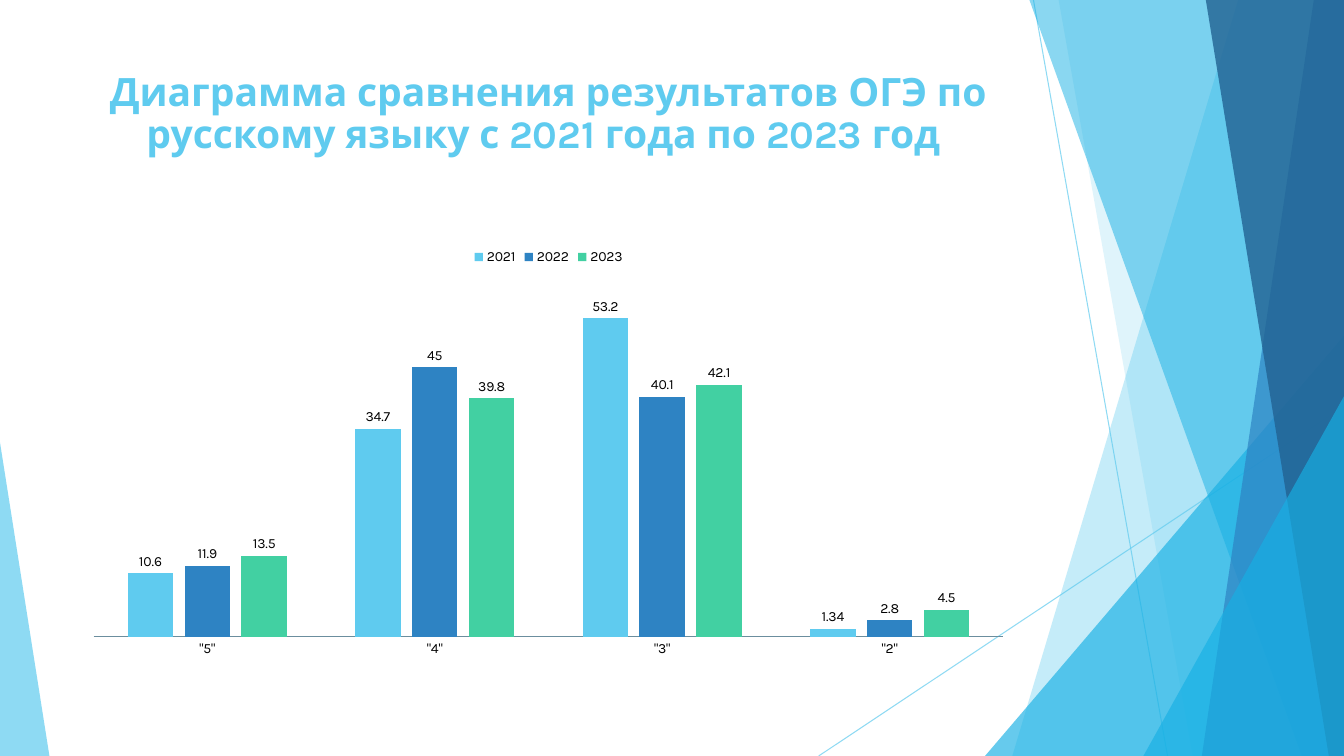
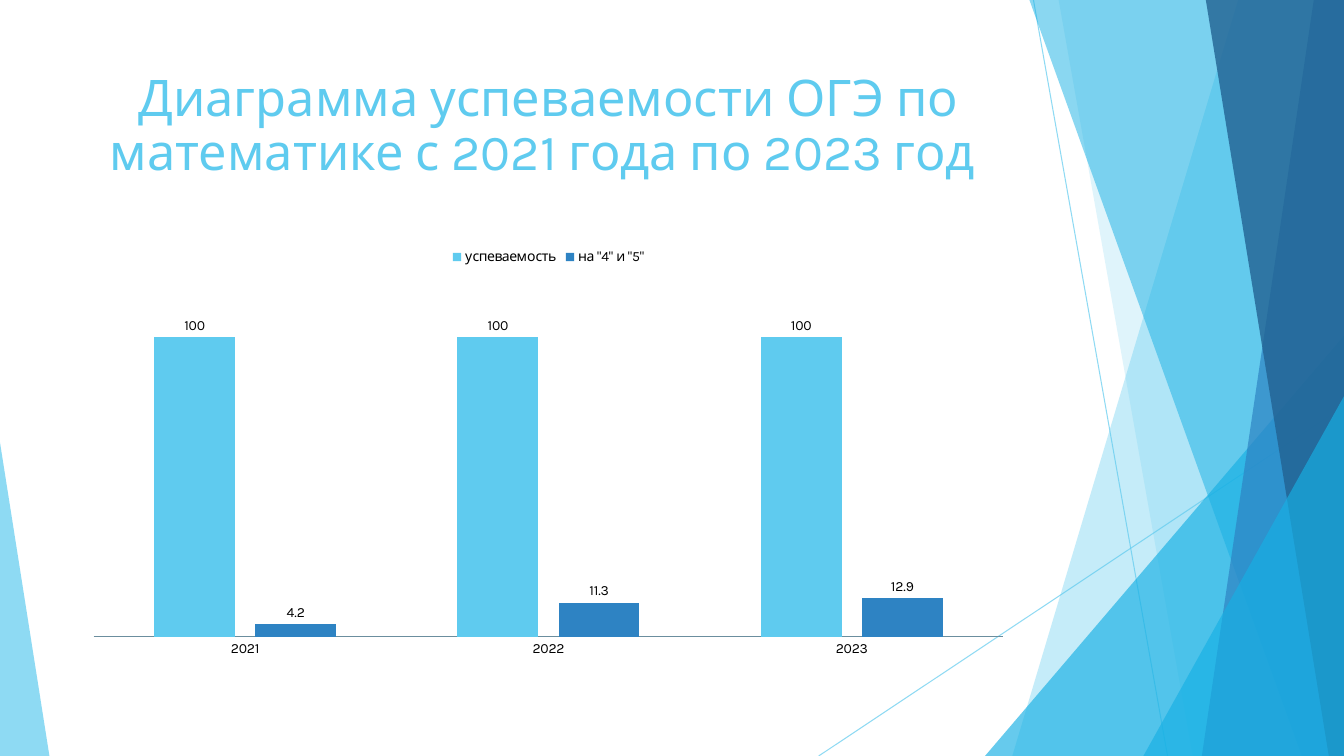
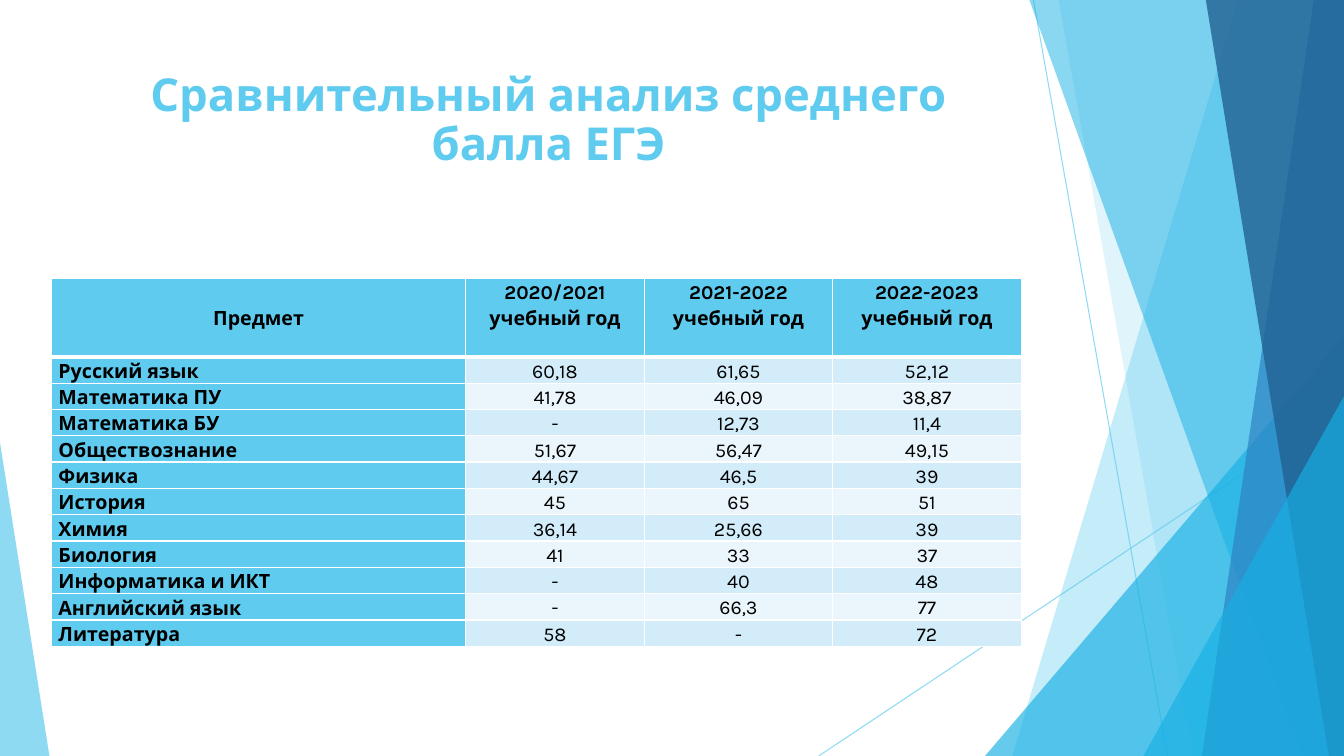
import dataclasses

import pptx
import pptx.chart.data
import pptx.dml.color
import pptx.enum.chart
import pptx.enum.shapes
import pptx.enum.text
import pptx.oxml
import pptx.oxml.ns
import pptx.util

Inches = pptx.util.Inches
Pt = pptx.util.Pt
WIDTH, HEIGHT = 13.33, 7.5


@dataclasses.dataclass(frozen=True)
class Theme:
    font: str = "Karla"
    sky: str = "5FCBEF"
    cyan: str = "17B0E4"
    blue: str = "2E83C3"
    navy: str = "226292"
    green: str = "42D0A2"
    axis: str = "6B8E9E"
    text: str = "000000"
    white: str = "FFFFFF"
    bands: tuple = ("D2ECF9", "EAF6FC")
    chart_size: float = 10
    table_size: float = 14


def rgb(value):
    return pptx.dml.color.RGBColor.from_string(value)


def set_opacity(shape, percent):
    for colour in shape.element.iter(pptx.oxml.ns.qn("a:srgbClr")):
        alpha = pptx.oxml.parse_xml(
            f'<a:alpha {pptx.oxml.ns.nsdecls("a")} val="{percent * 1000}"/>')
        colour.append(alpha)


def set_borders(cell, colour, top, bottom):
    """Draw all four cell edges; the side edges are one point wide."""
    edges = {"lnL": 1, "lnR": 1, "lnT": top, "lnB": bottom}
    properties = cell._tc.get_or_add_tcPr()
    for index, (edge, width) in enumerate(edges.items()):
        properties.insert(index, pptx.oxml.parse_xml(
            f'<a:{edge} {pptx.oxml.ns.nsdecls("a")} w="{Pt(width)}">'
            f'<a:solidFill><a:srgbClr val="{colour}"/></a:solidFill></a:{edge}>'))


class SlideBuilder:
    """Holds the deck, its theme and the slide being filled."""

    def __init__(self, theme):
        self.theme = theme
        self.deck = pptx.Presentation()
        self.deck.slide_width = Inches(WIDTH)
        self.deck.slide_height = Inches(HEIGHT)
        self.layout = self.deck.slide_layouts[5]
        self.slide = None
        self.group = None

    def add_slide(self, title, size, bold=False):
        self.slide = self.deck.slides.add_slide(self.layout)
        if self.group is None:
            self.decorate_layout()
        box = self.slide.shapes.title
        box.left, box.top = Inches(0.74), Inches(0.67)
        box.width, box.height = Inches(9.4), Inches(1.44)
        frame = box.text_frame
        frame.word_wrap = True
        frame.auto_size = pptx.enum.text.MSO_AUTO_SIZE.NONE
        frame.vertical_anchor = pptx.enum.text.MSO_ANCHOR.TOP
        para = frame.paragraphs[0]
        para.alignment = pptx.enum.text.PP_ALIGN.CENTER
        para.line_spacing = 0.9
        self.add_run(para, title, size, self.theme.sky, bold)

    def add_run(self, para, text, size, colour, bold):
        span = para.add_run()
        span.text = text
        self.style_font(span.font, size, colour)
        span.font.bold = bold

    def style_font(self, font, size, colour):
        font.name = self.theme.font
        font.size = Pt(size)
        font.color.rgb = rgb(colour)

    def decorate_layout(self):
        """Draw the facets as one group and move it to the shared layout."""
        theme = self.theme
        self.group = self.slide.shapes.add_group_shape()
        self.add_ray((10.25, 0), (11.58, HEIGHT))
        self.add_ray((WIDTH, 4.03), (8.12, HEIGHT))
        self.add_facet(12.28, 10.04, theme.sky, 36)
        self.add_facet(10.5, 11.83, theme.sky, 20)
        self.add_triangle(9.77, 3.33, 3.56, 1, theme.cyan, 66)
        self.add_facet(10.21, 12.91, theme.cyan, 50)
        self.add_facet(13.03, 11.92, theme.blue, 70)
        self.add_facet(11.96, 13.18, theme.navy, 80)
        self.add_triangle(11.34, 3.93, 1.99, 1, theme.cyan, 66)
        self.add_triangle(0, 4.39, 0.49, 0, theme.sky, 70)
        self.layout.shapes.element.append(self.group.element)

    def add_ray(self, start, end):
        ray = self.group.shapes.add_connector(
            pptx.enum.shapes.MSO_CONNECTOR.STRAIGHT,
            *(Inches(value) for value in start + end))
        ray.line.color.rgb = rgb(self.theme.sky)
        ray.line.width = Pt(0.75)
        set_opacity(ray, 70)
        ray.element.spPr.append(pptx.oxml.parse_xml(
            f'<a:effectLst {pptx.oxml.ns.nsdecls("a")}/>'))

    def add_facet(self, top_x, bottom_x, colour, opacity):
        """Fill from a slanted left edge to the right edge of the slide."""
        outline = self.group.shapes.build_freeform(Inches(top_x), 0)
        corners = ((WIDTH, 0), (WIDTH, HEIGHT), (bottom_x, HEIGHT))
        outline.add_line_segments([(Inches(x), Inches(y)) for x, y in corners])
        self.paint(outline.convert_to_shape(), colour, opacity)

    def add_triangle(self, left, top, width, apex, colour, opacity):
        """Stand a triangle on the slide's bottom edge; apex runs from 0 to 1."""
        triangle = self.group.shapes.add_shape(
            pptx.enum.shapes.MSO_SHAPE.ISOSCELES_TRIANGLE,
            Inches(left), Inches(top), Inches(width), Inches(HEIGHT - top))
        triangle.adjustments[0] = apex
        self.paint(triangle, colour, opacity)

    def paint(self, shape, colour, opacity):
        shape.fill.solid()
        shape.fill.fore_color.rgb = rgb(colour)
        shape.line.fill.background()
        shape.shadow.inherit = False
        set_opacity(shape, opacity)

    def add_columns(self, categories, series, maximum):
        theme = self.theme
        data = pptx.chart.data.CategoryChartData()
        data.categories = categories
        for name, values in series.items():
            data.add_series(name, values)
        chart = self.slide.shapes.add_chart(
            pptx.enum.chart.XL_CHART_TYPE.COLUMN_CLUSTERED,
            Inches(0.74), Inches(2.36), Inches(9.4), Inches(4.24), data).chart
        self.style_font(chart.font, theme.chart_size, theme.text)
        chart.has_title = False
        chart.has_legend = True
        chart.legend.position = pptx.enum.chart.XL_LEGEND_POSITION.TOP
        chart.legend.include_in_layout = False

        scale = chart.value_axis
        scale.visible = False
        scale.has_major_gridlines = False
        scale.minimum_scale, scale.maximum_scale = 0, maximum
        axis = chart.category_axis
        axis.major_tick_mark = pptx.enum.chart.XL_TICK_MARK.NONE
        axis.format.line.color.rgb = rgb(theme.axis)
        axis.format.line.width = Pt(0.75)

        plot = chart.plots[0]
        plot.gap_width, plot.overlap = 150, -25
        plot.vary_by_categories = False
        plot.has_data_labels = True
        labels = plot.data_labels
        labels.show_value = True
        labels.position = pptx.enum.chart.XL_LABEL_POSITION.OUTSIDE_END
        self.style_font(labels.font, theme.chart_size, theme.text)
        for columns, colour in zip(plot.series, (theme.sky, theme.blue, theme.green)):
            columns.format.fill.solid()
            columns.format.fill.fore_color.rgb = rgb(colour)

    def add_table(self, rows):
        widths = (4.11, 1.77, 1.87, 1.87)
        heights = [0.78] + [0.25] * (len(rows) - 1)
        table = self.slide.shapes.add_table(
            len(rows), len(widths), Inches(0.51), Inches(2.76),
            Inches(sum(widths)), Inches(sum(heights))).table
        table.first_row = table.horz_banding = False
        for column, width in zip(table.columns, widths):
            column.width = Inches(width)
        for row, height in zip(table.rows, heights):
            row.height = Inches(height)
        for row_index, texts in enumerate(rows):
            for column_index, text in enumerate(texts):
                self.fill_cell(table.cell(row_index, column_index), text,
                               row_index, column_index)

    def fill_cell(self, cell, text, row, column):
        theme = self.theme
        heading = row == 0 or column == 0
        cell.margin_left = cell.margin_right = Inches(0.07)
        cell.margin_top = cell.margin_bottom = 0
        anchors = pptx.enum.text.MSO_ANCHOR
        cell.vertical_anchor = anchors.MIDDLE if column == 0 else anchors.TOP
        cell.fill.solid()
        cell.fill.fore_color.rgb = rgb(
            theme.sky if heading else theme.bands[(row - 1) % 2])
        set_borders(cell, theme.white, top=3 if row == 1 else 1,
                    bottom=3 if row == 0 else 1)
        frame = cell.text_frame
        aligns = pptx.enum.text.PP_ALIGN
        for index, line in enumerate(text.split("\n")):
            para = frame.add_paragraph() if index else frame.paragraphs[0]
            para.alignment = aligns.LEFT if row and column == 0 else aligns.CENTER
            para.line_spacing = 1.15
            self.add_run(para, line, theme.table_size, theme.text, heading)


def main():
    builder = SlideBuilder(Theme())

    builder.add_slide("Диаграмма сравнения результатов ОГЭ по русскому языку "
                      "с 2021 года по 2023 год ", 27.9, bold=True)
    builder.add_columns(
        ('"5"', '"4"', '"3"', '"2"'),
        {"2021": (10.6, 34.7, 53.2, 1.34),
         "2022": (11.9, 45, 40.1, 2.8),
         "2023": (13.5, 39.8, 42.1, 4.5)}, maximum=60)

    builder.add_slide("Диаграмма успеваемости ОГЭ по математике "
                      "с 2021 года по 2023 год ", 36)
    builder.add_columns(
        ("2021", "2022", "2023"),
        {"успеваемость": (100, 100, 100),
         'на "4" и "5"': (4.2, 11.3, 12.9)}, maximum=120)

    builder.add_slide("Сравнительный анализ среднего балла ЕГЭ", 32.4, bold=True)
    builder.add_table((
        ("Предмет", "2020/2021\nучебный год", "2021-2022 учебный год",
         "2022-2023 учебный год"),
        ("Русский язык", "60,18", "61,65", "52,12"),
        ("Математика ПУ", "41,78", "46,09", "38,87"),
        ("Математика БУ", "-", "12,73", "11,4"),
        ("Обществознание", "51,67", "56,47", "49,15"),
        ("Физика", "44,67", "46,5", "39"),
        ("История", "45", "65", "51"),
        ("Химия", "36,14", "25,66", "39"),
        ("Биология", "41", "33", "37"),
        ("Информатика и ИКТ", "-", "40", "48"),
        ("Английский язык", "-", "66,3", "77"),
        ("Литература", "58", "-", "72"),
    ))

    builder.deck.save("out.pptx")


if __name__ == "__main__":
    main()
